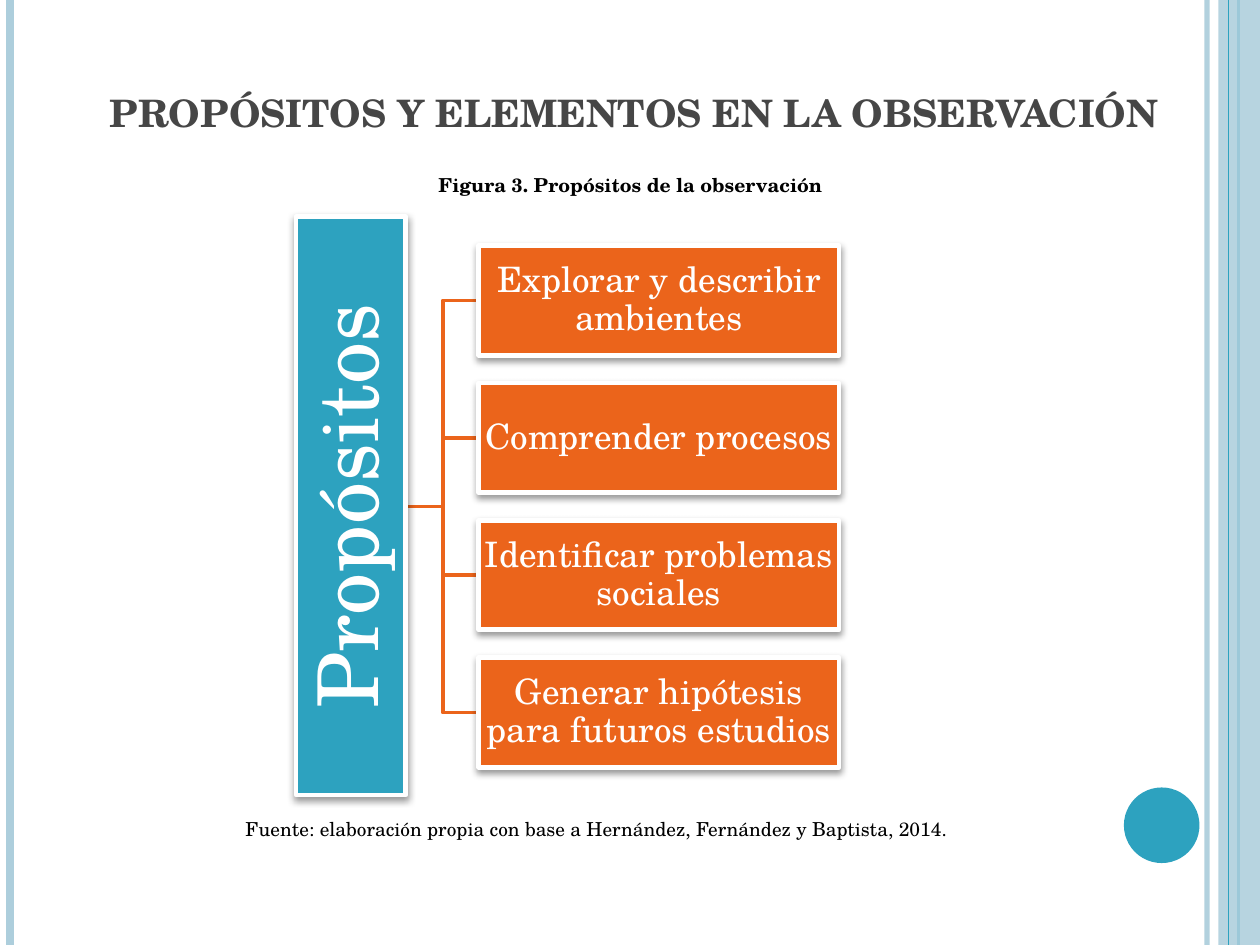
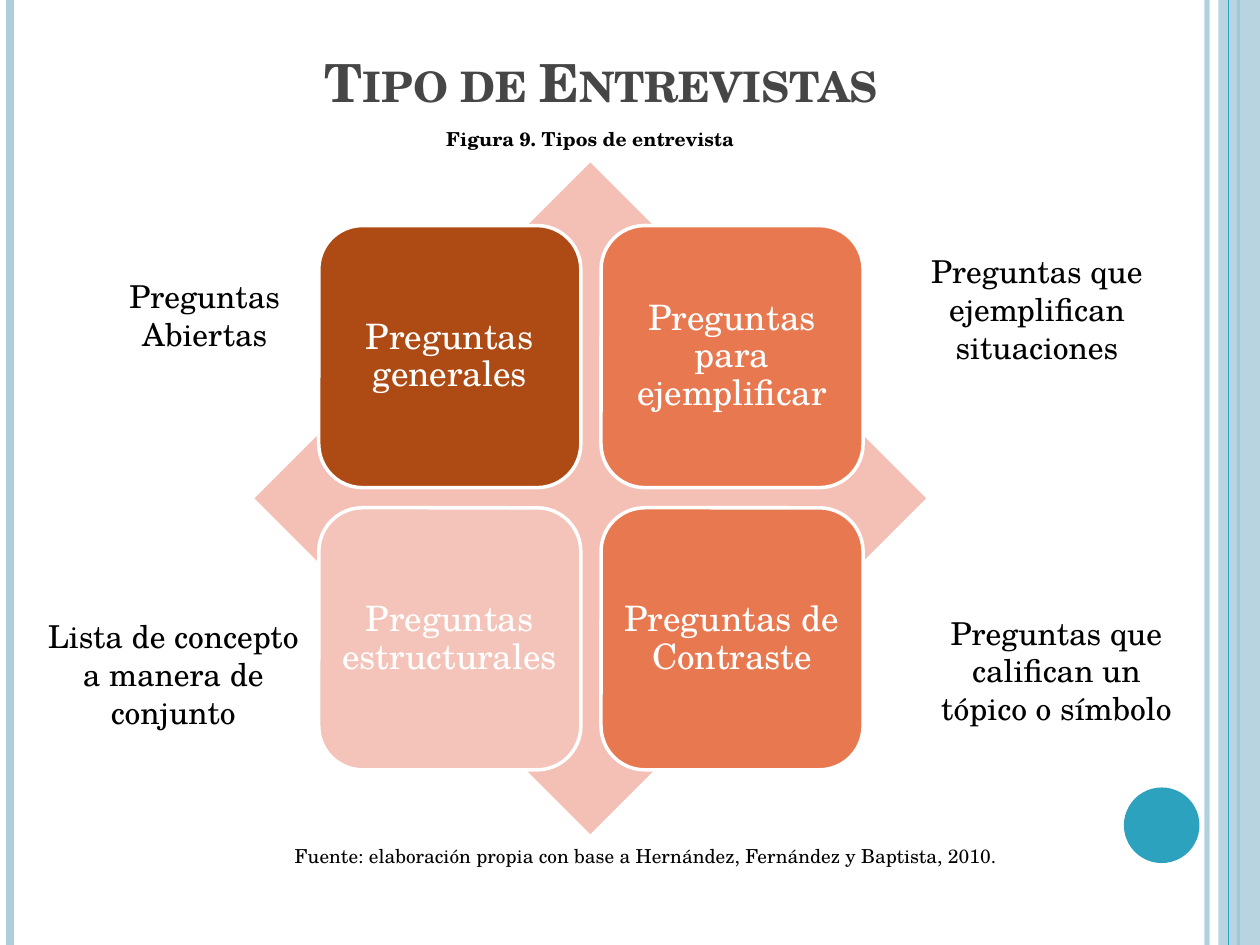
from lxml import etree
from pptx import Presentation
from pptx.dml import color
from pptx.enum import shapes, text
from pptx.oxml import ns
from pptx.util import Inches, Pt

TEAL, ORANGE, PALE_BLUE = "2DA2BF", "EB641B", "ADCEDC"
CORAL, WHITE, BLACK, GREY = "E77850", "FFFFFF", "000000", "464646"
TOP, MIDDLE, BOTTOM = text.MSO_ANCHOR.TOP, text.MSO_ANCHOR.MIDDLE, text.MSO_ANCHOR.BOTTOM
LEFT, CENTER = text.PP_ALIGN.LEFT, text.PP_ALIGN.CENTER
SHAPE = shapes.MSO_SHAPE


def rgb(value):
    return color.RGBColor.from_string(value)


def add_xml(parent, tag, **attrs):
    return etree.SubElement(parent, ns.qn(tag), {k: str(v) for k, v in attrs.items()})


class Deck:
    """Holds the shared style and the slide being drawn."""

    font = "TeX Gyre Schola"

    def __init__(self):
        self.prs = Presentation()
        self.prs.slide_width, self.prs.slide_height = Inches(10), Inches(7.5)

    def new_slide(self):
        self.slide = self.prs.slides.add_slide(self.prs.slide_layouts[6])
        self.vertical(9.58, PALE_BLUE, 3, 93)
        self.vertical(0.08, PALE_BLUE, 4.5)
        self.vertical(9.83, TEAL, 1.5)
        band = self.shape(SHAPE.RECTANGLE, 9.67, 0, 0.33, 7.5, PALE_BLUE)
        self.fade(band, 87)
        self.vertical(9.75, TEAL, 0.75)
        self.shape(SHAPE.OVAL, 8.92, 6.25, 0.6, 0.6, TEAL)

    def fade(self, sp, percent):
        for clr in sp._element.spPr.iter(ns.qn("a:srgbClr")):
            add_xml(clr, "a:alpha", val=percent * 1000)

    def vertical(self, x, hue, width, opacity=100):
        line = self.slide.shapes.add_connector(
            shapes.MSO_CONNECTOR.STRAIGHT, Inches(x), 0, Inches(x), Inches(7.5))
        line.line.color.rgb = rgb(hue)
        line.line.width = Pt(width)
        add_xml(line._element.spPr, "a:effectLst")
        if opacity < 100:
            self.fade(line, opacity)

    def shape(self, kind, x, y, w, h, fill, border=0):
        sp = self.slide.shapes.add_shape(kind, Inches(x), Inches(y), Inches(w), Inches(h))
        sp.shadow.inherit = False
        sp.fill.solid()
        sp.fill.fore_color.rgb = rgb(fill)
        if border:
            sp.line.color.rgb = rgb(WHITE)
            sp.line.width = Pt(border)
        else:
            sp.line.fill.background()
        return sp

    def drop_shadow(self, sp):
        effects = sp._element.spPr.find(ns.qn("a:effectLst"))
        shadow = add_xml(effects, "a:outerShdw", blurRad=Pt(4), dist=Pt(2),
                         dir=90 * 60000, rotWithShape=0)
        add_xml(add_xml(shadow, "a:srgbClr", val=BLACK), "a:alpha", val=40000)

    def set_text(self, sp, words, size, hue, align=CENTER, anchor=MIDDLE,
                 bold=False, inset=None, spacing=None, small_caps=False):
        tf = sp.text_frame
        tf.text = words
        tf.word_wrap = True
        tf.vertical_anchor = anchor
        if inset is not None:
            tf.margin_left = tf.margin_right = tf.margin_top = tf.margin_bottom = Inches(inset)
        p = tf.paragraphs[0]
        p.alignment, p.line_spacing = align, spacing
        r = p.runs[0]
        r.font.name, r.font.size, r.font.bold = self.font, Pt(size), bold
        r.font.color.rgb = rgb(hue)
        if small_caps:
            r._r.get_or_add_rPr().set("cap", "small")

    def text_box(self, words, x, y, w, h, size, hue=BLACK, **style):
        sp = self.slide.shapes.add_textbox(Inches(x), Inches(y), Inches(w), Inches(h))
        self.set_text(sp, words, size, hue, **style)

    def title(self, words, x, y, w, h, size):
        self.text_box(words, x, y, w, h, size, GREY, align=LEFT, anchor=BOTTOM,
                      bold=True, small_caps=True)

    def caption(self, words, x, y):
        self.text_box(words, x, y, 5.83, 0.23, 11, bold=True)

    def source(self, words, x, y):
        self.text_box(words, x, y, 7.4, 0.29, 11, align=LEFT, anchor=TOP)

    def box(self, kind, words, x, y, w, h, fill, border, size=20, inset=0.01):
        sp = self.shape(kind, x, y, w, h, fill, border)
        self.set_text(sp, words, size, WHITE, inset=inset, spacing=0.9)
        return sp

    def branch(self, x1, y1, x2, y2):
        middle = (x1 + x2) / 2
        builder = self.slide.shapes.build_freeform(Inches(x1), Inches(y1))
        corners = [(middle, y1), (middle, y2), (x2, y2)]
        builder.add_line_segments([(Inches(x), Inches(y)) for x, y in corners], close=False)
        sp = builder.convert_to_shape()
        sp.shadow.inherit = False
        sp.fill.background()
        sp.line.color.rgb = rgb(ORANGE)
        sp.line.width = Pt(2)


def purposes_slide(deck):
    deck.new_slide()
    deck.title("propósitos y elementos en la observación", 0.77, 0.29, 9.07, 0.85, 27)
    purposes = ["Explorar y describir ambientes", "Comprender procesos",
                "Identificar problemas sociales", "Generar hipótesis para futuros estudios"]
    height, pitch, first = 0.87, 1.09, 1.95
    tops = [first + pitch * i for i in range(len(purposes))]
    for y in tops:
        deck.branch(3.23, 4.02, 3.8, y + height / 2)
    root = deck.box(SHAPE.RECTANGLE, "Propósitos", 0.49, 3.58, 4.59, height, TEAL, 2.75, 48, 0.03)
    root.rotation = 270
    deck.drop_shadow(root)
    for y, words in zip(tops, purposes):
        deck.drop_shadow(deck.box(SHAPE.RECTANGLE, words, 3.8, y, 2.86, height, ORANGE, 2.75))
    deck.source("Fuente: elaboración propia con base a Hernández, Fernández y Baptista, 2014.", 1.85, 6.44)
    deck.caption("Figura 3. Propósitos de la observación", 2.09, 1.35)


def interviews_slide(deck):
    deck.new_slide()
    deck.title("Tipo de Entrevistas", 2.48, 0.1, 7, 0.85, 30)
    deck.shape(SHAPE.DIAMOND, 2.02, 1.29, 5.33, 5.33, "F4BFB5")
    questions = [("Preguntas generales", "AE4A14"), ("Preguntas para ejemplificar", CORAL),
                 ("Preguntas estructurales", "F4C3B9"), ("Preguntas de Contraste", CORAL)]
    side, pitch = 2.08, 2.24
    for i, (words, fill) in enumerate(questions):
        row, col = divmod(i, 2)
        deck.box(SHAPE.ROUNDED_RECTANGLE, words, 2.53 + pitch * col, 1.79 + pitch * row,
                 side, side, fill, 2, inset=0.07)
    notes = [("Preguntas Abiertas", 0.56, 2.15, 2.13, 0.71),
             ("Preguntas que ejemplifican situaciones", 6.85, 1.95, 2.76, 1.01),
             ("Lista de concepto a manera de conjunto", 0.27, 4.85, 2.21, 1.01),
             ("Preguntas que califican un tópico o símbolo", 7.28, 4.82, 2.21, 1.01)]
    for words, *place in notes:
        deck.text_box(words, *place, 18, anchor=TOP)
    deck.source("Fuente: elaboración propia con base a Hernández, Fernández y Baptista, 2010.", 2.24, 6.65)
    deck.caption("Figura 9. Tipos de entrevista", 1.77, 0.99)


def main():
    deck = Deck()
    purposes_slide(deck)
    interviews_slide(deck)
    deck.prs.save("out.pptx")


if __name__ == "__main__":
    main()
